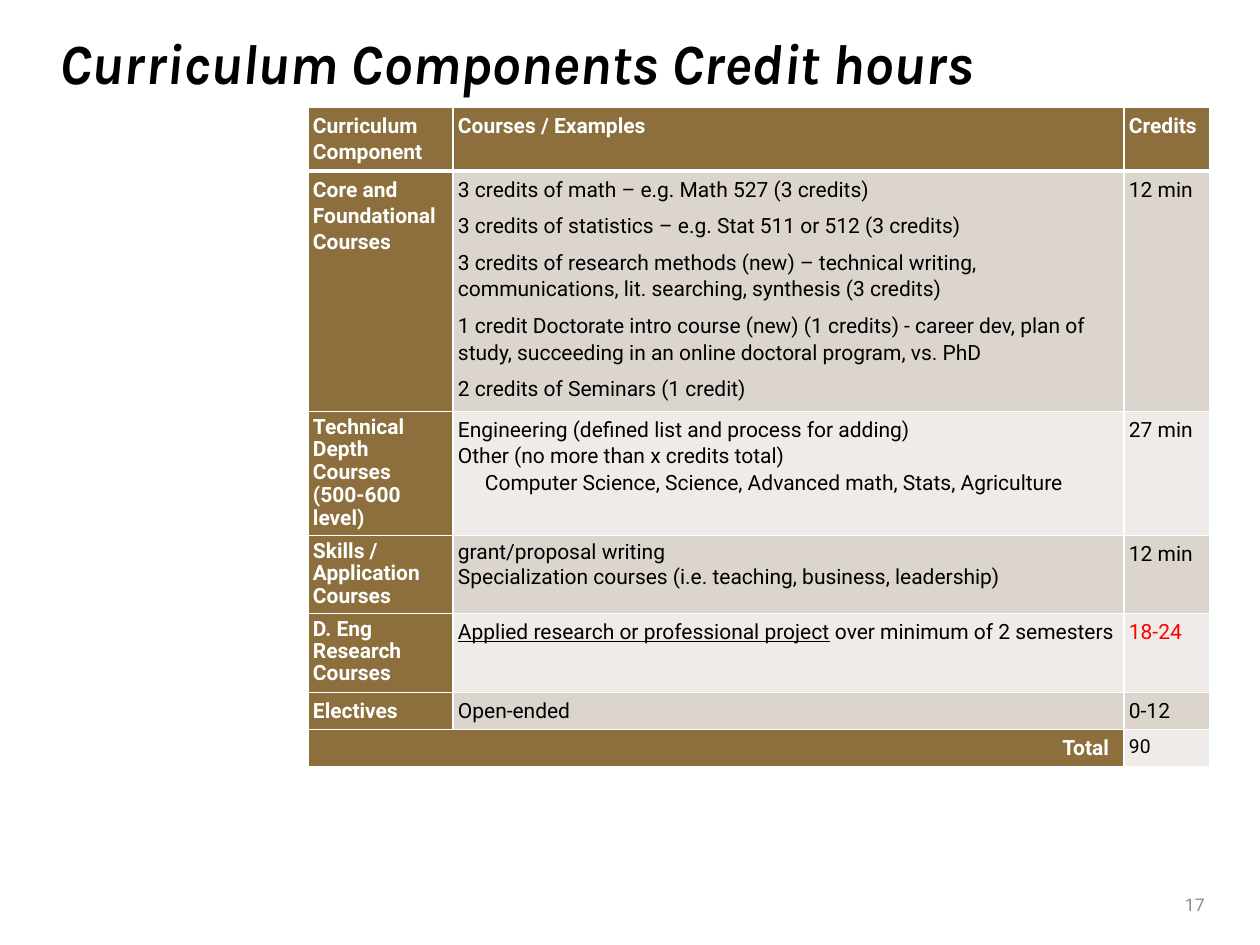
from dataclasses import dataclass

from lxml.etree import SubElement
from pptx import Presentation
from pptx.dml.color import RGBColor
from pptx.enum.text import MSO_ANCHOR as Anchor, MSO_AUTO_SIZE as AutoSize, PP_ALIGN as Align
from pptx.oxml.ns import qn
from pptx.util import Emu, Pt

PX_PER_INCH = 126
SLIDE = (1260, 945)
TITLE = "Curriculum Components Credit hours"
TITLE_BOX = (47, 26, 1164, 81)
NUMBER = "17"
NUMBER_BOX = (1091, 882, 126, 44)
TABLE_ORIGIN = (308, 107)
COLUMNS = (145, 671, 86)
ROWS = (63, 236, 124, 78, 79, 36, 36)
INSET = 5
TOTAL_INSET = 15
SUBITEM_INDENT = 27


@dataclass(frozen=True)
class Theme:
    paper: str = "FEFFFF"
    ink: str = "000000"
    brown: str = "8D6F3D"
    dark_band: str = "DBD5CE"
    light_band: str = "EEEBE8"
    red: str = "FF0000"
    grey: str = "8C8C8C"
    title_font: str = "Karla"
    body_font: str = "Roboto"
    title_size: float = 32.4
    body_size: float = 12
    total_size: float = 11
    number_size: float = 10
    rule: float = 1
    header_rule: float = 3


THEME = Theme()
LOOSE, TIGHT = 1.07, Pt(13)

HEADER = ("Curriculum Component", "Courses / Examples", "Credits")
# (component, its line spacing, courses, their line spacing, space after, credits)
COMPONENTS = [
    (["Core and Foundational Courses"], LOOSE, [
        "3 credits of math – e.g. Math 527 (3 credits)",
        "3 credits of statistics – e.g. Stat 511 or 512 (3 credits)",
        "3 credits of research methods (new) – technical writing, "
        "communications, lit. searching, synthesis (3 credits)",
        "1 credit Doctorate intro course (new) (1 credits) - career dev, plan of "
        "study, succeeding in an online doctoral program, vs. PhD",
        "2 credits of Seminars (1 credit)",
    ], LOOSE, 6, "12 min"),
    (["Technical Depth Courses", "(500-600 level)"], TIGHT, [
        "Engineering (defined list and process for adding)",
        "Other (no more than x credits total)",
        "Computer Science, Science, Advanced math, Stats, Agriculture",
    ], LOOSE, 0, "27 min"),
    (["Skills / Application Courses"], TIGHT, [
        "grant/proposal writing",
        "Specialization courses (i.e. teaching, business, leadership)",
    ], 1.0, 0, "12 min"),
    (["D. Eng Research Courses"], 0.9, [
        "Applied research or professional project over minimum of 2 semesters",
    ], LOOSE, 0, "18-24"),
    (["Electives"], LOOSE, ["Open-ended"], LOOSE, 0, "0-12"),
]
TOTAL = ("Total", "90")
UNDERLINED = "Applied research or professional project"
SUBITEM = "Computer Science"
RED_CREDITS = "18-24"


def px(length):
    return Emu(round(length * 914400 / PX_PER_INCH))


def add_span(para, text, color, size=THEME.body_size, font=THEME.body_font,
             bold=False, italic=False, underline=False):
    span = para.add_run()
    span.text = text
    face = span.font
    face.name, face.size = font, Pt(size)
    face.bold, face.italic, face.underline = bold, italic, underline
    face.color.rgb = RGBColor.from_string(color)


def draw_borders(cell, top, bottom):
    props = cell._tc.get_or_add_tcPr()
    widths = {"a:lnL": THEME.rule, "a:lnR": THEME.rule, "a:lnT": top, "a:lnB": bottom}
    for tag, width in widths.items():
        line = SubElement(props, qn(tag), w=str(Pt(width)))
        SubElement(SubElement(line, qn("a:solidFill")), qn("a:srgbClr"), val=THEME.paper)


def style_cell(cell, row, fill):
    draw_borders(cell,
                 THEME.header_rule if row == 1 else THEME.rule,
                 THEME.header_rule if row == 0 else THEME.rule)
    cell.fill.solid()
    cell.fill.fore_color.rgb = RGBColor.from_string(fill)
    cell.margin_left = cell.margin_right = px(INSET)
    cell.margin_top = cell.margin_bottom = px(INSET)
    cell.vertical_anchor = Anchor.TOP


def write_cell(cell, texts, color, spacing=LOOSE, after=0, bold=False, size=THEME.body_size):
    frame = cell.text_frame
    for index, text in enumerate(texts):
        para = frame.add_paragraph() if index else frame.paragraphs[0]
        para.line_spacing, para.space_after = spacing, Pt(after)
        if text.startswith(SUBITEM):
            para._p.get_or_add_pPr().set("marL", str(px(SUBITEM_INDENT)))
        if text.startswith(UNDERLINED):
            add_span(para, UNDERLINED, color, size, underline=True)
            text = text[len(UNDERLINED):]
        add_span(para, text, color, size, bold=bold)


def add_title(page):
    title = page.shapes.title
    title.left, title.top, title.width, title.height = map(px, TITLE_BOX)
    frame = title.text_frame
    frame.auto_size, frame.vertical_anchor = AutoSize.NONE, Anchor.MIDDLE
    para = frame.paragraphs[0]
    para.alignment, para.line_spacing = Align.LEFT, 0.9
    add_span(para, TITLE, THEME.ink, THEME.title_size, THEME.title_font, bold=True, italic=True)


def add_page_number(page):
    frame = page.shapes.add_textbox(*map(px, NUMBER_BOX)).text_frame
    frame.word_wrap, frame.vertical_anchor = True, Anchor.MIDDLE
    para = frame.paragraphs[0]
    para.alignment = Align.RIGHT
    add_span(para, NUMBER, THEME.grey, THEME.number_size)


def add_credit_table(page):
    table = page.shapes.add_table(
        len(ROWS), len(COLUMNS), *map(px, (*TABLE_ORIGIN, sum(COLUMNS), sum(ROWS)))).table
    table.first_row = table.horz_banding = False
    for column, width in zip(table.columns, COLUMNS):
        column.width = px(width)
    last = len(ROWS) - 1
    for row, height in enumerate(ROWS):
        table.rows[row].height = px(height)
        band = THEME.dark_band if row % 2 else THEME.light_band
        for column in range(len(COLUMNS)):
            is_label = row == 0 or column == 0 or (row == last and column == 1)
            style_cell(table.cell(row, column), row, THEME.brown if is_label else band)

    for column, text in enumerate(HEADER):
        write_cell(table.cell(0, column), [text], THEME.paper, bold=True)
    for row, (names, name_spacing, courses, spacing, after, credits) in enumerate(COMPONENTS, 1):
        write_cell(table.cell(row, 0), names, THEME.paper, name_spacing, bold=True)
        write_cell(table.cell(row, 1), courses, THEME.ink, spacing, after)
        write_cell(table.cell(row, 2), [credits],
                   THEME.red if credits == RED_CREDITS else THEME.ink)

    total = table.cell(last, 0)
    total.merge(table.cell(last, 1))
    write_cell(total, [TOTAL[0]], THEME.paper, bold=True)
    total.text_frame.paragraphs[0].alignment = Align.RIGHT
    total.margin_right = px(TOTAL_INSET)
    write_cell(table.cell(last, 2), [TOTAL[1]], THEME.ink, size=THEME.total_size)


def main():
    deck = Presentation()
    deck.slide_width, deck.slide_height = map(px, SLIDE)
    page = deck.slides.add_slide(deck.slide_layouts.get_by_name("Title Only"))
    page.background.fill.solid()
    page.background.fill.fore_color.rgb = RGBColor.from_string(THEME.paper)
    add_title(page)
    add_page_number(page)
    add_credit_table(page)
    deck.save("out.pptx")


if __name__ == "__main__":
    main()
